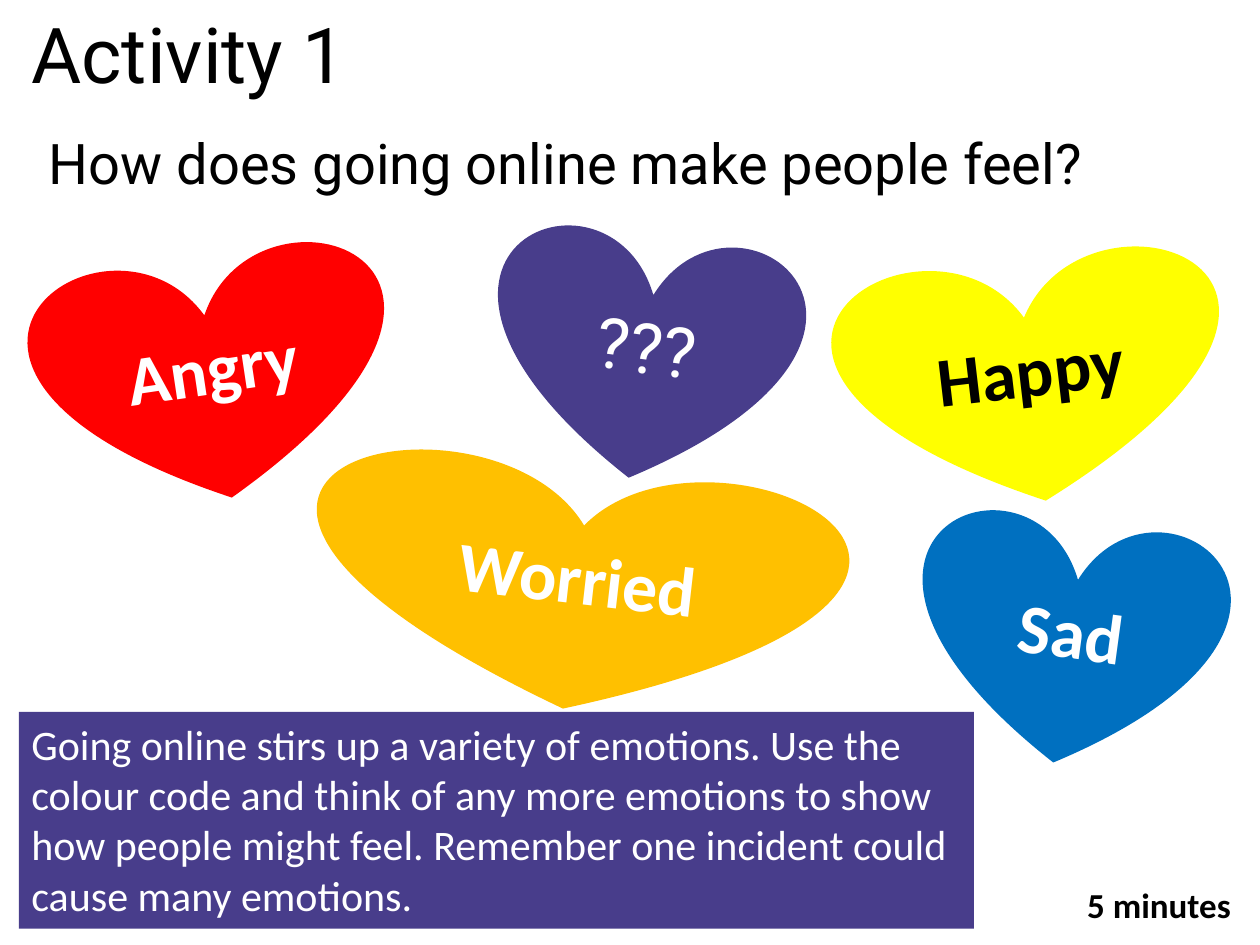
from pptx import Presentation
from pptx.dml.color import RGBColor
from pptx.enum.shapes import MSO_SHAPE
from pptx.enum.text import MSO_ANCHOR, MSO_AUTO_SIZE, PP_ALIGN
from pptx.util import Emu, Pt

PX = 9144
BLACK, WHITE, PURPLE = "000000", "FFFFFF", "483D8B"

TITLE = "Activity 1"
QUESTION = "How does going online make people feel?"
DURATION = "5 minutes"
INSTRUCTIONS = (
    "Going online stirs up a variety of emotions. Use the colour code and think "
    "of any more emotions to show how people might feel. Remember one incident "
    "could cause many emotions."
)
HEART_HEIGHT = 195
EMOTIONS = [
    # word, left, top, width, rotation, fill, text colour, font, bold
    ("Angry", 28, 201, 283, -8.6, "FF0000", WHITE, "Calibri", True),
    ("Worried", 247, 368, 422, 6.6, "FFC000", WHITE, "Calibri", True),
    ("Sad", 727, 411, 244, 7.7, "0070C0", WHITE, "Calibri", True),
    ("Happy", 665, 203, 307, -6.8, "FFFF00", BLACK, "Calibri", True),
    ("???", 390, 185, 244, 7.7, PURPLE, WHITE, "Roboto", False),
]


def colour(value):
    return RGBColor.from_string(value)


def box(*lengths):
    return [Emu(length * PX) for length in lengths]


def write(shape, text, size, font, ink, bold=False, align=PP_ALIGN.LEFT,
          anchor=MSO_ANCHOR.TOP, wrap=True):
    frame = shape.text_frame
    frame.text = text
    frame.word_wrap = wrap
    frame.auto_size = MSO_AUTO_SIZE.NONE
    frame.vertical_anchor = anchor
    paragraph = frame.paragraphs[0]
    paragraph.alignment = align
    style = paragraph.runs[0].font
    style.size, style.name, style.bold = Pt(size), font, bold
    style.color.rgb = colour(ink)


def add_filled(slide, preset, bounds, fill):
    shape = slide.shapes.add_shape(preset, *box(*bounds))
    shape.shadow.inherit = False
    shape.fill.solid()
    shape.fill.fore_color.rgb = colour(fill)
    shape.line.fill.background()
    return shape


def main():
    presentation = Presentation()
    presentation.slide_width, presentation.slide_height = box(1000, 750)
    slide = presentation.slides.add_slide(presentation.slide_layouts[5])

    title = slide.shapes.title
    title.left, title.top, title.width, title.height = box(15, 0, 315, 84)
    write(title, TITLE, 44, "Roboto", BLACK, wrap=False)

    duration = slide.shapes.add_textbox(*box(853, 696, 163, 44))
    write(duration, DURATION, 20, "Calibri", BLACK, bold=True)
    question = slide.shapes.add_textbox(*box(29, 97, 953, 64))
    write(question, QUESTION, 32, "Roboto", BLACK)

    for word, left, top, width, rotation, fill, ink, font, bold in EMOTIONS:
        heart = add_filled(slide, MSO_SHAPE.HEART, (left, top, width, HEART_HEIGHT), fill)
        heart.rotation = rotation
        write(heart, word, 40, font, ink, bold, PP_ALIGN.CENTER, MSO_ANCHOR.MIDDLE)

    instructions = add_filled(slide, MSO_SHAPE.RECTANGLE, (15, 565, 758, 172), PURPLE)
    write(instructions, INSTRUCTIONS, 24, "Calibri", WHITE)

    presentation.save("out.pptx")


if __name__ == "__main__":
    main()
